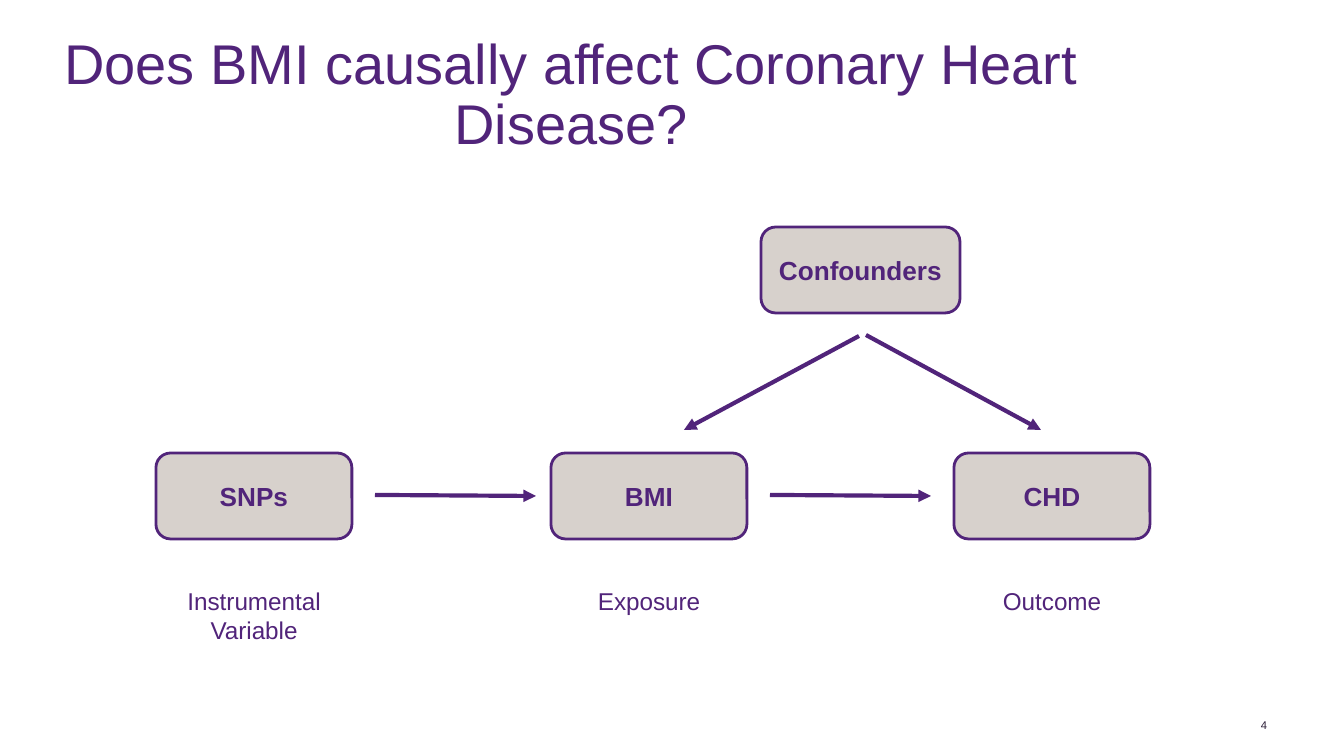
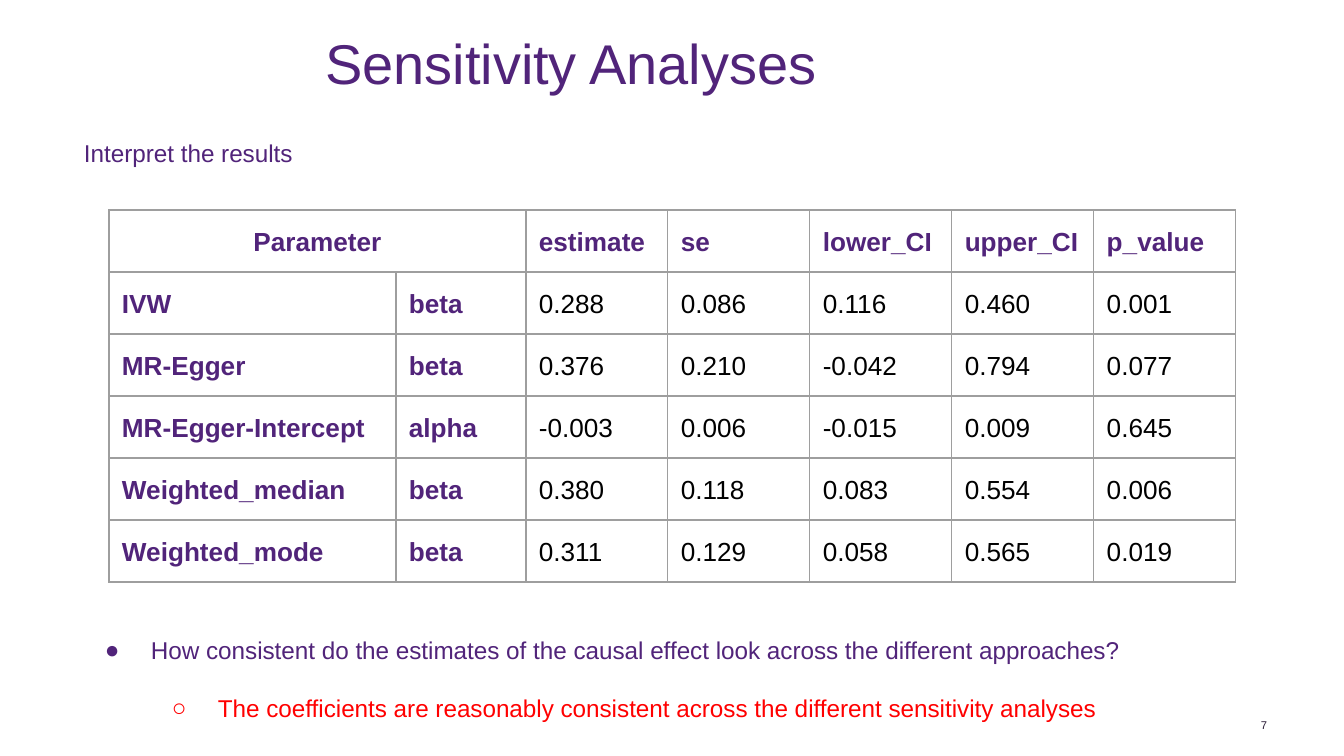
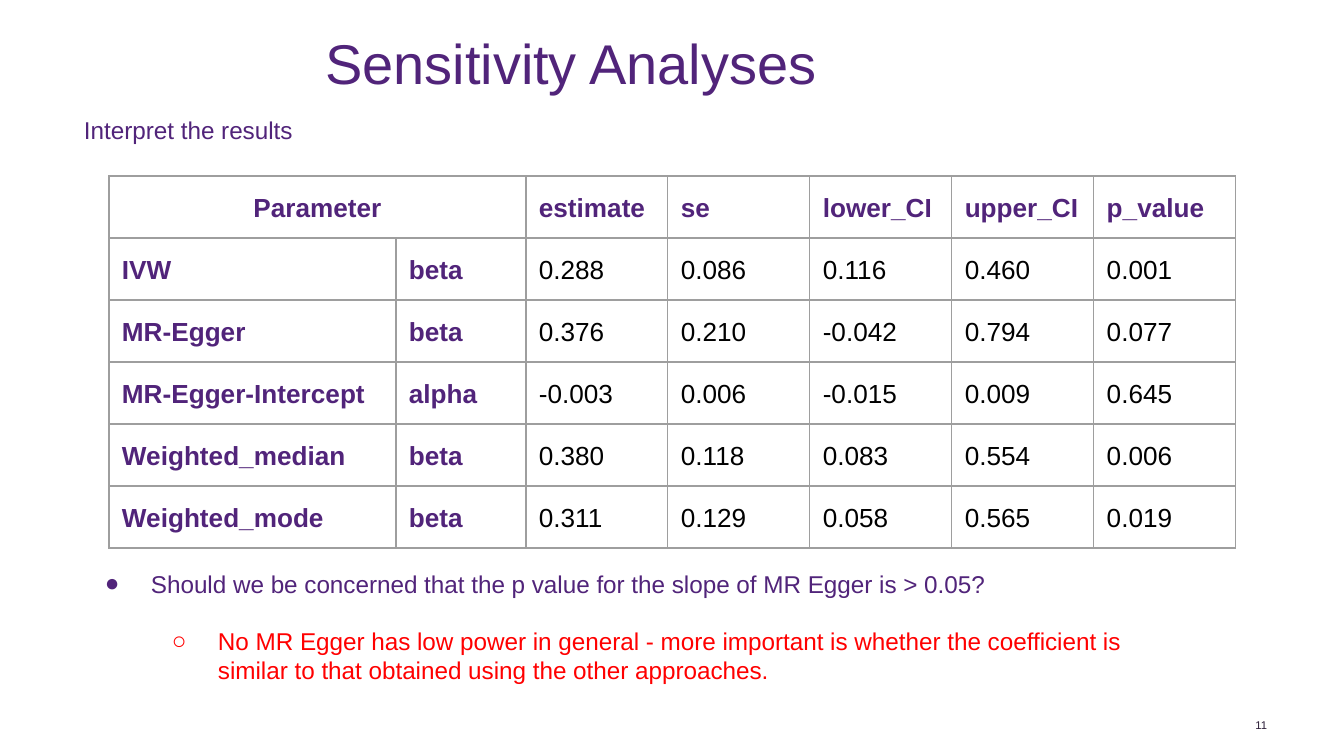
import dataclasses
import lxml.etree
import pptx
import pptx.dml.color
import pptx.enum.shapes
import pptx.enum.text
import pptx.oxml.ns
import pptx.util


@dataclasses.dataclass(frozen=True)
class Theme:
    font: str = "Arial"
    main: str = "51247A"
    dark: str = "2B1D37"
    fill: str = "D7D1CC"
    grid: str = "9E9E9E"
    plain: str = "000000"
    reply: str = "FF0000"
    head: int = 30
    bold: int = 14
    body: int = 13
    foot: int = 6
    pad: int = 13


THEME = Theme()
SCALE = 914400 / 134.4
SIZE = (1344, 756)
ALIGN = pptx.enum.text.PP_ALIGN
MIDDLE = pptx.enum.text.MSO_ANCHOR.MIDDLE
SHAPE = pptx.enum.shapes.MSO_SHAPE
LINE = pptx.enum.shapes.MSO_CONNECTOR

CHAIN = [
    ("SNPs", "Instrumental Variable", 156),
    ("BMI", "Exposure", 551),
    ("CHD", "Outcome", 954),
]
CAUSE = ("Confounders", (761, 227, 199, 86))
FORKS = [(859, 336, 684, 430), (866, 335, 1041, 430)]
NODE = (453, 196, 86)
LABEL = (573, 175, 78)
ARROW = (23, 161, 495)

HEADS = ["Parameter", "", "estimate", "se", "lower_CI", "upper_CI", "p_value"]
ROWS = [
    ["IVW", "beta", "0.288", "0.086", "0.116", "0.460", "0.001"],
    ["MR-Egger", "beta", "0.376", "0.210", "-0.042", "0.794", "0.077"],
    ["MR-Egger-Intercept", "alpha", "-0.003", "0.006", "-0.015", "0.009", "0.645"],
    ["Weighted_median", "beta", "0.380", "0.118", "0.083", "0.554", "0.006"],
    ["Weighted_mode", "beta", "0.311", "0.129", "0.058", "0.565", "0.019"],
]
WIDTHS = [287, 130] + [142] * 5
HIGH = 56

MODEL = {"title": "Does BMI causally affect Coronary Heart Disease?", "page": "4"}
TESTS = [
    {
        "title": "Sensitivity Analyses", "page": "7",
        "lead": "Interpret the results", "tops": (125, 210, 593),
        "ask": "How consistent do the estimates of the causal effect look across the different approaches?",
        "reply": "The coefficients are reasonably consistent across the different sensitivity analyses",
        "space": 2.0, "gap": 0,
    },
    {
        "title": "Sensitivity Analyses", "page": "11",
        "lead": "Interpret the results", "tops": (102, 176, 556),
        "ask": "Should we be concerned that the p value for the slope of MR Egger is > 0.05?",
        "reply": "No MR Egger has low power in general - more important is whether the coefficient is similar to that obtained using the other approaches.",
        "space": 1.0, "gap": 15,
    },
]


def px(num):
    return pptx.util.Emu(round(num * SCALE))


def rgb(tone):
    return pptx.dml.color.RGBColor.from_string(tone)


def node(root, tag, **attrs):
    return lxml.etree.SubElement(root, pptx.oxml.ns.qn(tag), attrs)


def write(para, text, size=THEME.body, tone=THEME.main, bold=False,
          align=ALIGN.LEFT, space=None, gap=0, mark=None, level=0):
    if mark:
        props = para._p.get_or_add_pPr()
        props.set("marL", str(px(67 * (level + 1))))
        props.set("indent", str(px(-46)))
        node(node(props, "a:buClr"), "a:srgbClr", val=tone)
        node(props, "a:buFont", typeface=THEME.font)
        node(props, "a:buChar", char=mark)
        para.level = level
    para.alignment = align
    if space:
        para.line_spacing = space
    if gap:
        para.space_before = pptx.util.Pt(gap)
    run = para.add_run()
    run.text = text
    run.font.name = THEME.font
    run.font.size = pptx.util.Pt(size)
    run.font.bold = bold
    run.font.color.rgb = rgb(tone)


def inset(part, pad):
    part.margin_left = part.margin_right = px(pad)
    part.margin_top = part.margin_bottom = px(pad)


def frame(shape, pad=THEME.pad, anchor=pptx.enum.text.MSO_ANCHOR.TOP):
    body = shape.text_frame
    body.word_wrap = True
    body.vertical_anchor = anchor
    inset(body, pad)
    return body


def label(slide, box, text, pad=THEME.pad, anchor=pptx.enum.text.MSO_ANCHOR.TOP, **style):
    shape = slide.shapes.add_textbox(*map(px, box))
    body = frame(shape, pad, anchor)
    write(body.paragraphs[0], text, **style)
    return body


def block(slide, box, text):
    shape = slide.shapes.add_shape(SHAPE.ROUNDED_RECTANGLE, *map(px, box))
    shape.shadow.inherit = False
    shape.adjustments[0] = 0.17
    shape.fill.solid()
    shape.fill.fore_color.rgb = rgb(THEME.fill)
    shape.line.color.rgb = rgb(THEME.main)
    shape.line.width = pptx.util.Pt(1.5)
    write(frame(shape, anchor=MIDDLE).paragraphs[0], text,
          size=THEME.bold, bold=True, align=ALIGN.CENTER)


def arrow(slide, ends):
    line = slide.shapes.add_connector(LINE.STRAIGHT, *map(px, ends))
    line.line.color.rgb = rgb(THEME.main)
    line.line.width = pptx.util.Pt(2.25)
    node(line.line._get_or_add_ln(), "a:tailEnd", type="triangle")
    node(line._element.spPr, "a:effectLst")


def start(deck, data):
    slide = deck.slides.add_slide(deck.slide_layouts[6])
    label(slide, (2, 36, 1138, 51), data["title"], pad=0, size=THEME.head,
          align=ALIGN.CENTER, space=0.9)
    label(slide, (1235, 719, 32, 12), data["page"], pad=0, anchor=MIDDLE,
          size=THEME.foot, tone=THEME.dark, align=ALIGN.RIGHT)
    return slide


def model(deck):
    slide = start(deck, MODEL)
    top, wide, high = NODE
    low, span, deep = LABEL
    gap, reach, mid = ARROW
    for name, role, left in CHAIN:
        block(slide, (left, top, wide, high), name)
        label(slide, (left + (wide - span) / 2, low, span, deep), role,
              align=ALIGN.CENTER)
    block(slide, CAUSE[1], CAUSE[0])
    for name, role, left in CHAIN[:-1]:
        tip = left + wide + gap
        arrow(slide, (tip, mid, tip + reach, mid + 1))
    for ends in FORKS:
        arrow(slide, ends)


def edge(cell):
    props = cell._tc.get_or_add_tcPr()
    for side in ("a:lnL", "a:lnR", "a:lnT", "a:lnB"):
        line = node(props, side, w=str(pptx.util.Pt(0.75)))
        node(node(line, "a:solidFill"), "a:srgbClr", val=THEME.grid)
    cell.fill.background()


def grid(slide, top):
    cells = [HEADS] + ROWS
    table = slide.shapes.add_table(
        len(cells), len(HEADS), px(109), px(top),
        px(sum(WIDTHS)), px(HIGH * len(cells))).table
    table.first_row = table.horz_banding = False
    for col, wide in zip(table.columns, WIDTHS):
        col.width = px(wide)
    for row, texts in enumerate(cells):
        table.rows[row].height = px(HIGH)
        for col, text in enumerate(texts):
            cell = table.cell(row, col)
            inset(cell, THEME.pad)
            edge(cell)
            if text:
                name = row == 0 or col < 2
                write(cell.text_frame.paragraphs[0], text, size=THEME.bold,
                      tone=THEME.main if name else THEME.plain, bold=name,
                      align=ALIGN.LEFT if row or col else ALIGN.CENTER, space=1.15)
    table.cell(0, 0).merge(table.cell(0, 1))


def test(deck, data):
    slide = start(deck, data)
    lead, top, notes = data["tops"]
    label(slide, (71, lead, 249, 59), data["lead"])
    grid(slide, top)
    body = label(slide, (71, notes, 1079, 117), data["ask"],
                 space=data["space"], mark="●")
    write(body.add_paragraph(), data["reply"], tone=THEME.reply,
          space=data["space"], gap=data["gap"], mark="○", level=1)


def main():
    deck = pptx.Presentation()
    deck.slide_width, deck.slide_height = map(px, SIZE)
    model(deck)
    for data in TESTS:
        test(deck, data)
    deck.save("out.pptx")


if __name__ == "__main__":
    main()
